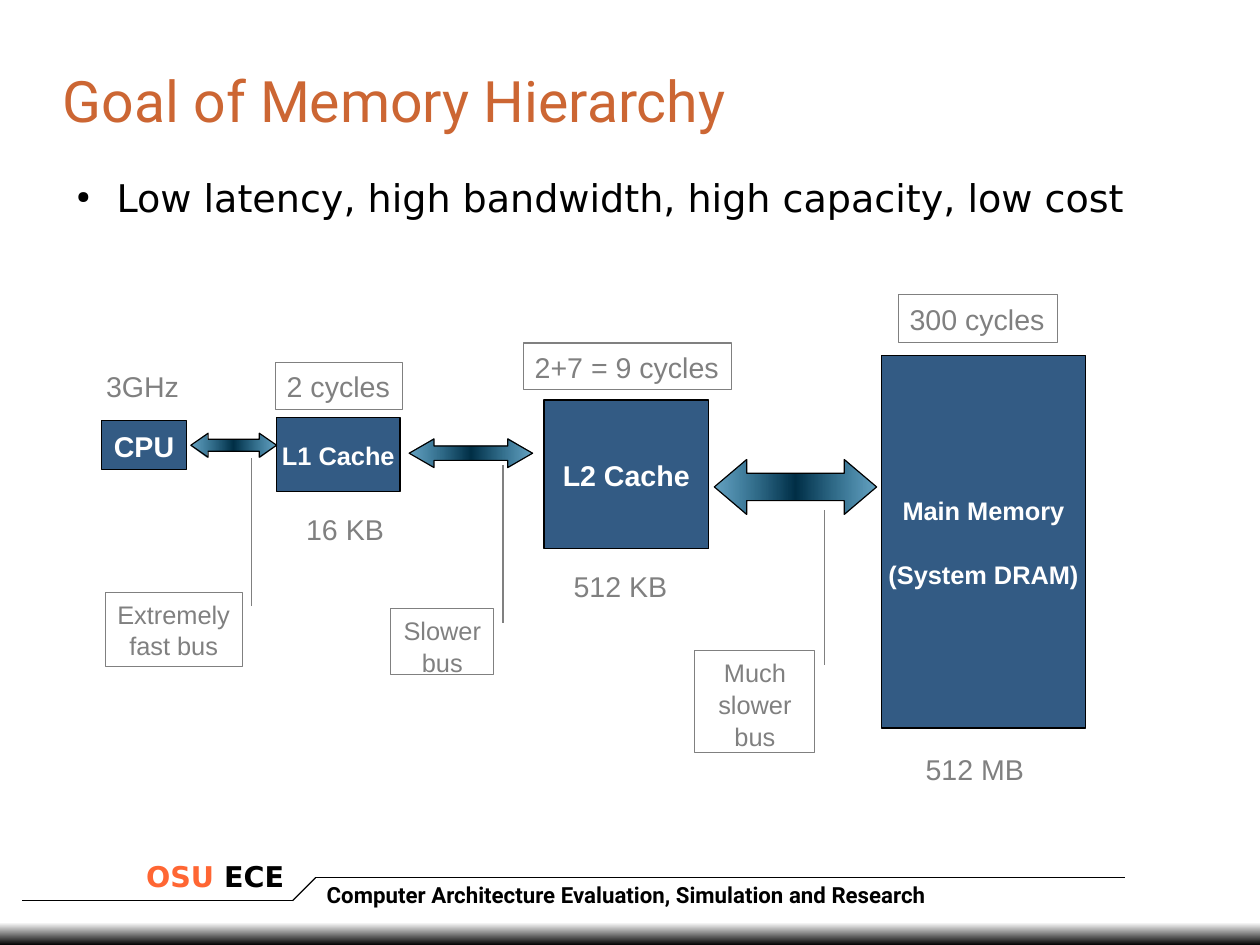
from copy import deepcopy

from lxml.etree import SubElement
from pptx import Presentation
from pptx.dml.color import RGBColor
from pptx.enum.shapes import MSO_CONNECTOR, MSO_SHAPE
from pptx.enum.text import MSO_ANCHOR, MSO_AUTO_SIZE, PP_ALIGN
from pptx.oxml.ns import qn
from pptx.util import Inches, Pt

BLACK, GRAY, WHITE = "000000", "808080", "FFFFFF"


def rgb(code):
    return RGBColor.from_string(code)


def write(box, lines, size, font="Arial", bold=False, spacing=1.04,
          align=PP_ALIGN.LEFT, anchor=MSO_ANCHOR.TOP, wrap=True, inset=True, gap=0):
    """Fill a box with lines, each a list of (text, colour) runs."""
    frame = box.text_frame
    frame.word_wrap = wrap
    frame.vertical_anchor = anchor
    frame.margin_left = frame.margin_right = Inches(0.1 if inset else 0)
    frame.margin_top = frame.margin_bottom = Inches(0.05 if inset else 0)
    for index, runs in enumerate(lines):
        para = frame.add_paragraph() if index else frame.paragraphs[0]
        para.alignment = align
        para.line_spacing = spacing
        if index:
            para.space_before = Pt(gap)
        for text, colour in runs:
            span = para.add_run()
            span.text = text
            span.font.size = Pt(size)
            span.font.name = font
            span.font.bold = bold
            span.font.color.rgb = rgb(colour)


deck = Presentation()
deck.slide_width, deck.slide_height = Pt(793.75), Pt(595.25)
page = deck.slides.add_slide(deck.slide_layouts[6])
shapes = page.shapes

# Footer
band = shapes.add_shape(MSO_SHAPE.RECTANGLE, 0, Inches(8.07), deck.slide_width, Inches(0.2))
band.shadow.inherit = False
band.line.fill.background()
band.fill.gradient()
band.fill.gradient_angle = 270
for stop, colour in zip(band.fill.gradient_stops, (WHITE, BLACK)):
    stop.color.rgb = rgb(colour)

group_name = shapes.add_textbox(Inches(2.76), Inches(7.67), Inches(6.82), Inches(0.33))
write(group_name, [[("Computer Architecture Evaluation, Simulation and Research", BLACK)]],
      14, "Roboto", bold=True, spacing=0.98)

rule_points = [(9.84, 7.68), (2.76, 7.68), (2.56, 7.88), (0.19, 7.88)]
for (x1, y1), (x2, y2) in zip(rule_points, rule_points[1:]):
    rule = shapes.add_connector(MSO_CONNECTOR.STRAIGHT, Inches(x1), Inches(y1), Inches(x2), Inches(y2))
    rule.line.color.rgb = rgb(BLACK)
    rule.line.width = Pt(0.75)
    SubElement(rule.element.spPr, qn("a:effectLst"))

school = shapes.add_textbox(Inches(1.18), Inches(7.48), Inches(1.57), Inches(0.39))
write(school, [[("OSU", "FF6633"), (" ECE", BLACK)]], 18, "DejaVu Sans", bold=True, spacing=0.98)

# Title and bullet
title = shapes.add_textbox(Inches(0.55), Inches(0.33), Inches(9.92), Inches(1.14))
write(title, [[("Goal of Memory Hierarchy", "CC6633")]], 36, "Roboto",
      spacing=0.97, anchor=MSO_ANCHOR.MIDDLE, inset=False)

goals = shapes.add_textbox(Inches(0.55), Inches(1.55), Inches(9.92), Inches(0.67))
write(goals, [[("Low latency, high bandwidth, high capacity, low cost", BLACK)]],
      24, "DejaVu Sans", spacing=0.97, inset=False)
goal = goals.text_frame.paragraphs[0]
goal.space_after = Pt(14.2)
props = goal._p.get_or_add_pPr()
props.set("marL", str(Inches(0.47)))
props.set("indent", str(Inches(-0.35)))
SubElement(SubElement(props, qn("a:buClr")), qn("a:srgbClr"), val=BLACK)
SubElement(props, qn("a:buSzPct"), val="45000")
SubElement(props, qn("a:buChar"), char="●")

# Memory levels
levels = [
    (0.89, 3.68, 0.74, 0.43, 18, ["CPU"]),
    (2.42, 3.65, 1.08, 0.65, 16, ["L1 Cache"]),
    (4.76, 3.5, 1.44, 1.3, 18, ["L2 Cache"]),
    (7.71, 3.11, 1.79, 3.26, 16, ["Main Memory", "(System DRAM)"]),
]
for x, y, width, height, size, names in levels:
    level = shapes.add_shape(MSO_SHAPE.RECTANGLE, Inches(x), Inches(y), Inches(width), Inches(height))
    level.shadow.inherit = False
    level.fill.solid()
    level.fill.fore_color.rgb = rgb("003366")
    for node in level.element.spPr.iter(qn("a:srgbClr")):
        SubElement(node, qn("a:alpha"), val="80000")
    level.line.color.rgb = rgb(BLACK)
    level.line.width = Pt(0.75)
    write(level, [[(name, WHITE)] for name in names], size, bold=True, wrap=False,
          align=PP_ALIGN.CENTER, anchor=MSO_ANCHOR.MIDDLE, gap=20)

# Buses: translucent ends, shaded middle
buses = [
    (1.67, 3.79, 0.75, 0.21, 0.72),
    (3.58, 3.84, 1.08, 0.25, 0.87),
    (6.25, 4.02, 1.42, 0.48, 0.59),
]
for x, y, width, height, head in buses:
    bus = shapes.add_shape(MSO_SHAPE.LEFT_RIGHT_ARROW, Inches(x), Inches(y), Inches(width), Inches(height))
    bus.shadow.inherit = False
    bus.adjustments[0], bus.adjustments[1] = 0.5, head
    bus.fill.gradient()
    bus.fill.gradient_angle = 0
    for stop in bus.fill.gradient_stops:
        stop.color.rgb = rgb("006699")
    stop_list = next(bus.element.spPr.iter(qn("a:gsLst")))
    middle = deepcopy(stop_list[0])
    middle.set("pos", "50000")
    SubElement(middle[0], qn("a:gamma"))
    SubElement(middle[0], qn("a:shade"), val="46275")
    SubElement(middle[0], qn("a:invGamma"))
    for end in stop_list:
        SubElement(end[0], qn("a:alpha"), val="60000")
    stop_list.insert(1, middle)
    bus.line.color.rgb = rgb(BLACK)
    bus.line.width = Pt(0.75)

# Clock rate, capacities and latencies; latencies are framed
labels = [
    (0.83, 3.17, 0.84, 0.4, "3GHz", False),
    (2.41, 3.17, 1.11, 0.41, "2 cycles", True),
    (2.58, 4.42, 0.88, 0.4, "16 KB", False),
    (4.58, 3, 1.82, 0.41, "2+7 = 9 cycles", True),
    (4.92, 4.92, 1.02, 0.4, "512 KB", False),
    (7.86, 2.58, 1.39, 0.42, "300 cycles", True),
    (8, 6.52, 1.17, 0.4, "512 MB", False),
]
for x, y, width, height, text, framed in labels:
    label = shapes.add_textbox(Inches(x), Inches(y), Inches(width), Inches(height))
    write(label, [[(text, GRAY)]], 18, wrap=text == "512 MB")
    label.text_frame.auto_size = MSO_AUTO_SIZE.SHAPE_TO_FIT_TEXT
    if framed:
        label.line.color.rgb = rgb(GRAY)
        label.line.width = Pt(0.75)

# Callouts: a vertical leader at `side`, from `start` up to `end`
callouts = [
    (0.92, 5.18, 1.2, 0.65, 0.19, 1.07, -1.81, "Extremely fast bus"),
    (3.42, 5.32, 0.9, 0.58, 0.22, 1.09, -2.16, "Slower bus"),
    (6.08, 5.69, 1.05, 0.89, 0.14, 1.08, -1.38, "Much slower bus"),
]
for x, y, width, height, start, side, end, text in callouts:
    callout = shapes.add_shape(MSO_SHAPE.LINE_CALLOUT_1, Inches(x), Inches(y), Inches(width), Inches(height))
    callout.shadow.inherit = False
    for index, value in enumerate((start, side, end, side)):
        callout.adjustments[index] = value
    callout.fill.background()
    callout.line.color.rgb = rgb(GRAY)
    callout.line.width = Pt(0.75)
    write(callout, [[(text, GRAY)]], 16, align=PP_ALIGN.CENTER)

deck.save("out.pptx")
